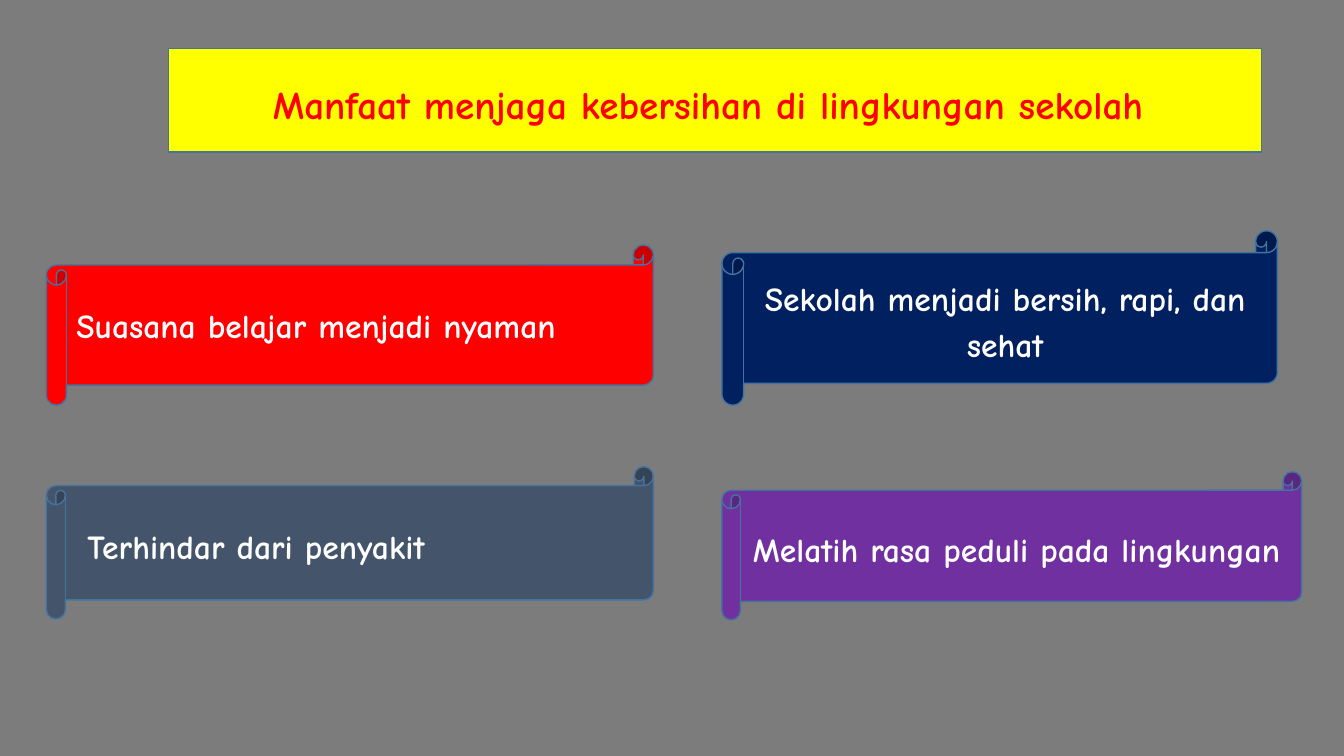
import pptx
import pptx.util
import pptx.dml.color
import pptx.enum.shapes
import pptx.enum.text
import pptx.oxml

Inches, Pt = pptx.util.Inches, pptx.util.Pt
RGBColor = pptx.dml.color.RGBColor
Align = pptx.enum.text.PP_ALIGN

FONT = "Comic Neue"
GREY = RGBColor(0x7C, 0x7C, 0x7C)
YELLOW = RGBColor(0xFF, 0xFF, 0x00)
RED = RGBColor(0xFF, 0x00, 0x00)
SLATE = RGBColor(0x44, 0x54, 0x6A)
NAVY = RGBColor(0x00, 0x20, 0x60)
PURPLE = RGBColor(0x70, 0x30, 0xA0)
WHITE = RGBColor(0xFF, 0xFF, 0xFF)
OUTLINE = RGBColor(0x43, 0x73, 0x9E)

# Left edges of the two columns of scrolls
LEFT, RIGHT = 0.46, 7.16

# Text, box (left, top, width, height), fill, alignment, line spacing
BENEFITS = [
    ("Suasana belajar menjadi nyaman", (LEFT, 2.43, 6.02, 1.59), RED, Align.LEFT, 1.0),
    (" Terhindar dari penyakit", (LEFT, 4.63, 6.02, 1.51), SLATE, Align.JUSTIFY, 1.15),
    ("Sekolah menjadi bersih, rapi, dan sehat", (RIGHT, 2.29, 5.51, 1.73), NAVY, Align.CENTER, 1.15),
    ("Melatih rasa peduli pada lingkungan", (RIGHT, 4.68, 5.75, 1.47), PURPLE, Align.CENTER, 1.15),
]


def paint(shape, fill):
    shape.fill.solid()
    shape.fill.fore_color.rgb = fill
    shape.line.color.rgb = OUTLINE
    shape.line.width = Pt(1)


def write(shape, text, size, color, align, spacing):
    frame = shape.text_frame
    frame.text = text
    frame.word_wrap = True
    frame.auto_size = pptx.enum.text.MSO_AUTO_SIZE.NONE
    frame.vertical_anchor = pptx.enum.text.MSO_ANCHOR.MIDDLE
    para = frame.paragraphs[0]
    para.alignment = align
    para.line_spacing = spacing
    font = para.runs[0].font
    font.name, font.size, font.bold = FONT, Pt(size), True
    font.color.rgb = color


def add_banner(page, text, box):
    """Turn the title placeholder into a rounded banner."""
    title = page.shapes.title
    title.left, title.top, title.width, title.height = map(Inches, box)
    outline = pptx.oxml.parse_xml(
        '<a:prstGeom xmlns:a="http://schemas.openxmlformats.org/drawingml/2006/main"'
        ' prst="flowChartAlternateProcess"><a:avLst/></a:prstGeom>')
    title.element.spPr.append(outline)
    paint(title, YELLOW)
    write(title, text, 28, RED, Align.CENTER, 1.15)


def add_scroll(page, text, box, fill, align, spacing):
    scroll = page.shapes.add_shape(
        pptx.enum.shapes.MSO_SHAPE.HORIZONTAL_SCROLL, *map(Inches, box))
    scroll.shadow.inherit = False
    paint(scroll, fill)
    write(scroll, text, 24, WHITE, align, spacing)


def main():
    deck = pptx.Presentation()
    deck.slide_width, deck.slide_height = Inches(13.33), Inches(7.5)
    page = deck.slides.add_slide(deck.slide_layouts[5])  # title only
    page.background.fill.solid()
    page.background.fill.fore_color.rgb = GREY

    # Heading
    add_banner(page, "Manfaat menjaga kebersihan di lingkungan sekolah ",
               (1.67, 0.48, 10.84, 1.03))

    # Four benefits
    for benefit in BENEFITS:
        add_scroll(page, *benefit)

    deck.save("out.pptx")


if __name__ == "__main__":
    main()
